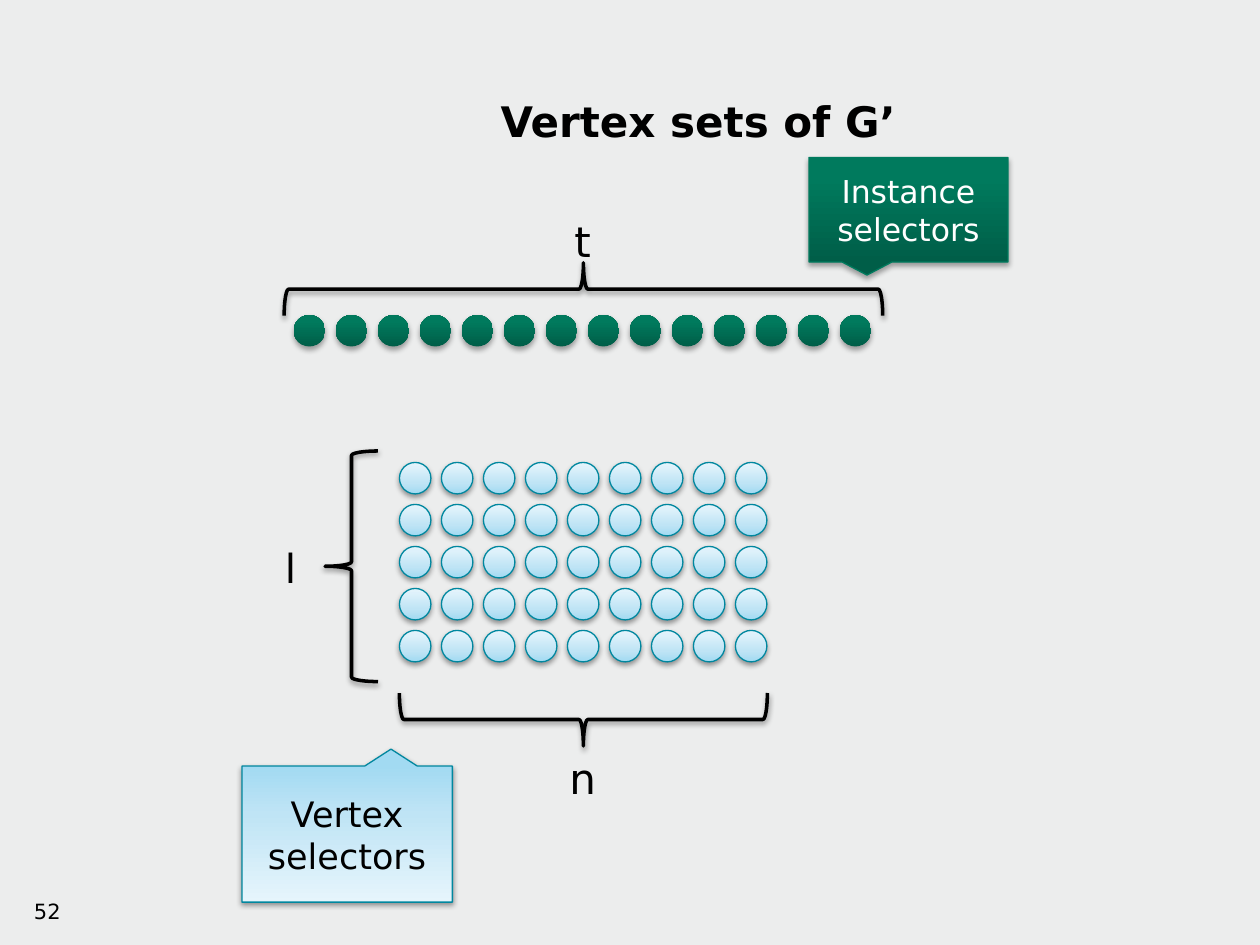
from dataclasses import dataclass
from typing import Optional

from lxml import etree
from pptx import Presentation
from pptx.dml.color import RGBColor
from pptx.enum.shapes import MSO_SHAPE
from pptx.enum.text import MSO_ANCHOR, PP_ALIGN
from pptx.oxml import parse_xml
from pptx.oxml.ns import nsdecls, qn
from pptx.util import Inches, Pt

OVAL = MSO_SHAPE.OVAL
BRACE = MSO_SHAPE.LEFT_BRACE
CALLOUT = MSO_SHAPE.RECTANGULAR_CALLOUT
LEFT, CENTER, RIGHT = PP_ALIGN.LEFT, PP_ALIGN.CENTER, PP_ALIGN.RIGHT
TOP, MIDDLE = MSO_ANCHOR.TOP, MSO_ANCHOR.MIDDLE

COLORS = {
    "background": "ECEDED",
    "black": "000000",
    "white": "FFFFFF",
    "green_line": "007B5E",
    "blue_line": "00879F",
}
FONT = "DejaVu Sans"
DOT_SIZE = 0.25
DOT_PITCH = 1 / 3


@dataclass
class Style:
    stops: tuple  # (percent, hex colour), from bottom to top
    line: Optional[str]
    line_width: float
    shadow_alpha: int
    shadow_distance: float


@dataclass
class Box:
    left: float
    top: float
    width: float
    height: float
    rotation: float = 0


@dataclass
class DotGrid:
    left: float
    top: float
    columns: int
    rows: int
    style: Style


@dataclass
class Label:
    text: str
    box: Box
    size: float
    align: PP_ALIGN = LEFT
    anchor: MSO_ANCHOR = TOP
    font: str = FONT
    bold: bool = False
    color: str = "black"


GREEN_STOPS = ((0, "005E48"), (80, "007A5D"), (100, "007B5D"))
BLUE_STOPS = ((0, "A2DAF2"), (35, "BFE4F5"), (100, "E6F5FC"))
GREEN_DOT = Style(GREEN_STOPS, None, 0, 35, 1.8)
GREEN_CALLOUT = Style(GREEN_STOPS, "green_line", 0.75, 35, 1.8)
BLUE = Style(BLUE_STOPS, "blue_line", 0.75, 38, 1.6)
BRACE_STYLE = Style((), "black", 2, 38, 1.6)

INSTANCE_BOX = Box(6.42, 1.25, 1.58, 0.83)

DOT_GRIDS = [
    DotGrid(3.17, 3.67, 9, 5, BLUE),
    DotGrid(2.33, 2.5, 14, 1, GREEN_DOT),
]
BRACES = [
    Box(4.42, 4.25, 0.42, 2.92, 270),
    Box(2.58, 3.58, 0.42, 1.83),
    Box(4.42, -0.08, 0.42, 4.75, 90),
]
CALLOUTS = [
    (INSTANCE_BOX, GREEN_CALLOUT),
    (Box(1.92, 6.08, 1.67, 1.08, 180), BLUE),
]
LABELS = [
    Label("52", Box(0, 7.08, 0.58, 0.42), 12, RIGHT),
    Label("Vertex sets of G’", Box(1.5, 0.33, 8.08, 1.25), 24, CENTER, MIDDLE, bold=True),
    Label("n", Box(4.42, 5.92, 0.33, 0.5), 24),
    Label("l", Box(2.17, 4.25, 0.33, 0.5), 24, font="Arial"),
    Label("t", Box(4.46, 1.66, 0.33, 0.5), 24),
    Label("Instance selectors", INSTANCE_BOX, 18, CENTER, MIDDLE, color="white"),
    Label("Vertex selectors", Box(1.92, 6.24, 1.67, 0.77), 20, CENTER, MIDDLE),
]


def rgb(name: str) -> RGBColor:
    return RGBColor.from_string(COLORS[name])


def place(box: Box) -> tuple:
    return tuple(Inches(v) for v in (box.left, box.top, box.width, box.height))


def add_gradient(sp, stops: tuple) -> None:
    gs = "".join(f'<a:gs pos="{pos * 1000}"><a:srgbClr val="{color}"/></a:gs>'
                 for pos, color in stops)
    fill = parse_xml(f'<a:gradFill {nsdecls("a")} rotWithShape="1"><a:gsLst>{gs}</a:gsLst>'
                     '<a:lin ang="16200000" scaled="0"/></a:gradFill>')
    sp._element.spPr.find(qn("a:prstGeom")).addnext(fill)


def add_shadow(sp, style: Style) -> None:
    sp.shadow.inherit = False
    effects = sp._element.spPr.find(qn("a:effectLst"))
    shadow = etree.SubElement(effects, qn("a:outerShdw"), blurRad=str(Pt(3.1)),
                              dist=str(Pt(style.shadow_distance)), dir="5400000",
                              rotWithShape="0")
    color = etree.SubElement(shadow, qn("a:srgbClr"), val=COLORS["black"])
    etree.SubElement(color, qn("a:alpha"), val=str(style.shadow_alpha * 1000))


def add_styled_shape(slide, kind: MSO_SHAPE, box: Box, style: Style):
    sp = slide.shapes.add_shape(kind, *place(box))
    sp.rotation = box.rotation
    if style.stops:
        add_gradient(sp, style.stops)
    else:
        sp.fill.background()
    if style.line:
        sp.line.color.rgb = rgb(style.line)
        sp.line.width = Pt(style.line_width)
    else:
        sp.line.fill.background()
    add_shadow(sp, style)
    return sp


def add_dots(slide, grid: DotGrid) -> None:
    for row in range(grid.rows):
        for col in range(grid.columns):
            box = Box(grid.left + col * DOT_PITCH, grid.top + row * DOT_PITCH,
                      DOT_SIZE, DOT_SIZE)
            add_styled_shape(slide, OVAL, box, grid.style)


def write_label(sp, label: Label) -> None:
    tf = sp.text_frame
    tf.word_wrap = True
    tf.vertical_anchor = label.anchor
    p = tf.paragraphs[0]
    p.text = label.text
    p.alignment = label.align
    p.font.name = label.font
    p.font.size = Pt(label.size)
    p.font.bold = label.bold
    p.font.color.rgb = rgb(label.color)


def main() -> None:
    prs = Presentation()
    prs.slide_width, prs.slide_height = Inches(10), Inches(7.5)
    slide = prs.slides.add_slide(prs.slide_layouts[6])
    slide.background.fill.solid()
    slide.background.fill.fore_color.rgb = rgb("background")

    # Vertex grid and instance row
    for grid in DOT_GRIDS:
        add_dots(slide, grid)

    # Braces marking the dimensions
    for box in BRACES:
        add_styled_shape(slide, BRACE, box, BRACE_STYLE)

    # Callouts; the upright one carries its own text
    callouts = [add_styled_shape(slide, CALLOUT, box, style) for box, style in CALLOUTS]

    # Title, page number and labels
    for label in LABELS:
        if label.box is INSTANCE_BOX:
            sp = callouts[0]
        else:
            sp = slide.shapes.add_textbox(*place(label.box))
        write_label(sp, label)

    prs.save("out.pptx")


if __name__ == "__main__":
    main()
